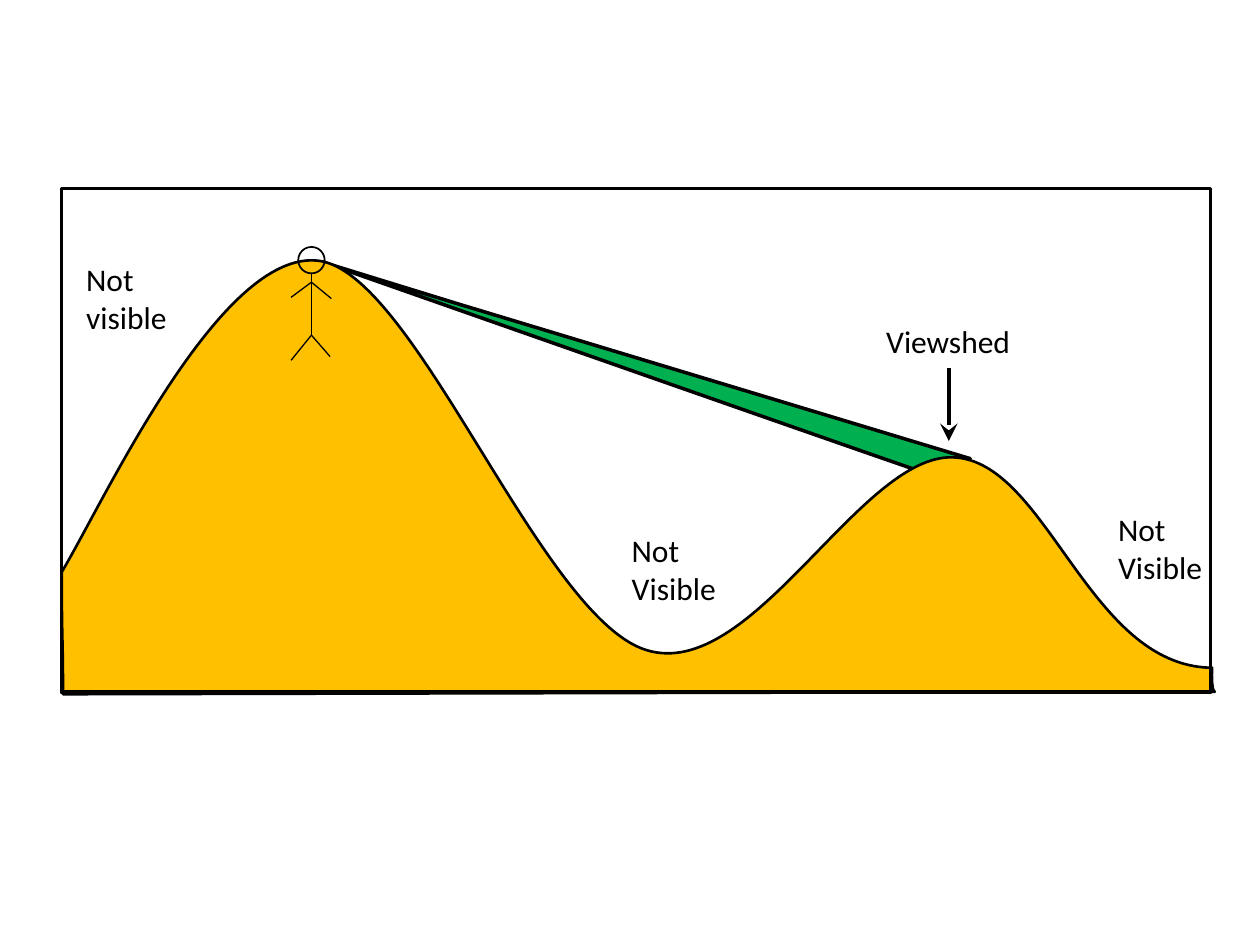
import pptx
import pptx.dml.color
import pptx.enum.shapes
import pptx.enum.text
import pptx.oxml.ns
import pptx.util
from lxml import etree

COLUMNS, ROWS = 100, 75
BLACK, GREEN, GOLD = "000000", "00B050", "FFC000"
qn = pptx.oxml.ns.qn


def rgb(value):
    return pptx.dml.color.RGBColor.from_string(value)


class Drawing:
    font = "Calibri"
    size = 18
    ink = BLACK

    def __init__(self, prs):
        self.col = prs.slide_width / COLUMNS
        self.row = prs.slide_height / ROWS
        self.slide = prs.slides.add_slide(prs.slide_layouts[6])
        self.shapes = self.slide.shapes

    def place(self, x, y):
        return round(x * self.col), round(y * self.row)

    def style(self, sp, fill, weight):
        sp.shadow.inherit = False
        if fill:
            sp.fill.solid()
            sp.fill.fore_color.rgb = rgb(fill)
        else:
            sp.fill.background()
        self.stroke(sp, weight)

    def stroke(self, sp, weight):
        sp.line.color.rgb = rgb(self.ink)
        sp.line.width = pptx.util.Pt(weight)

    def freeform(self, start, segments, fill, weight):
        builder = self.shapes.build_freeform(*self.place(*start))
        builder.add_line_segments([self.place(*seg[-1]) for seg in segments], close=True)
        sp = builder.convert_to_shape()
        for line, seg in zip(list(sp._element.iter(qn("a:lnTo"))), segments):
            if len(seg) == 3:
                self.bend(sp, line, seg)
        self.style(sp, fill, weight)

    def bend(self, sp, line, points):
        curve = etree.Element(qn("a:cubicBezTo"))
        for point in points:
            x, y = self.place(*point)
            etree.SubElement(curve, qn("a:pt"), x=str(x - sp.left), y=str(y - sp.top))
        line.getparent().replace(line, curve)

    def shape(self, kind, x, y, w, h, weight, parent=None):
        sp = (parent or self.shapes).add_shape(kind, *self.place(x, y), *self.place(w, h))
        self.style(sp, None, weight)

    def line(self, start, end, weight, parent=None, arrow=None):
        sp = (parent or self.shapes).add_connector(
            pptx.enum.shapes.MSO_CONNECTOR.STRAIGHT,
            *self.place(*start), *self.place(*end))
        self.stroke(sp, weight)
        if arrow:
            etree.SubElement(sp.line._get_or_add_ln(), qn("a:tailEnd"),
                             type=arrow, w="lg", len="lg")
        etree.SubElement(sp._element.spPr, qn("a:effectLst"))

    def label(self, lines, x, y, w, h):
        tf = self.shapes.add_textbox(*self.place(x, y), *self.place(w, h)).text_frame
        tf.word_wrap = False
        tf.auto_size = pptx.enum.text.MSO_AUTO_SIZE.SHAPE_TO_FIT_TEXT
        tf.text = "\n".join(lines)
        for p in tf.paragraphs:
            p.font.name = self.font
            p.font.size = pptx.util.Pt(self.size)
            p.font.color.rgb = rgb(self.ink)

    def observer(self):
        figure = self.shapes.add_group_shape().shapes
        shoulder, hip = (24.72, 22.4), (24.72, 26.6)
        self.shape(pptx.enum.shapes.MSO_SHAPE.OVAL, 23.67, 19.6, 2.1, 2.1, 1, figure)
        limbs = [((24.72, 21.7), hip), (hip, (26.2, 28.3)), (shoulder, (26.3, 23.7)),
                 (shoulder, (23.1, 23.6)), (hip, (23.1, 28.6))]
        for start, end in limbs:
            self.line(start, end, 0.75, figure)


def main():
    prs = pptx.Presentation()
    prs.slide_width = pptx.util.Inches(10)
    prs.slide_height = pptx.util.Inches(7.5)
    s = Drawing(prs)

    sight = [
        [(77, 36.4)],
        [(73.6, 37.6)],
        [(66, 35), (25.6, 20.8), (25.6, 20.8)],
    ]
    s.freeform((36.3, 24.1), sight, GREEN, 2)

    hills = [
        [(96.2, 53), (96.1, 54.7), (96.4, 54.9)],
        [(5, 55.1)],
        [(5, 50.4), (4.9, 51.1), (4.9, 45.4)],
        [(8.3, 39.7), (17.5, 19.7), (25.3, 20.7)],
        [(33, 21.7), (42.9, 49), (51.3, 51.6)],
        [(59.7, 54.2), (68.2, 36.1), (75.6, 36.3)],
        [(83.1, 36.5), (86.3, 52.8), (96.1, 53)],
    ]
    s.freeform((96.2, 53), hills, GOLD, 1.5)

    s.observer()
    s.shape(pptx.enum.shapes.MSO_SHAPE.RECTANGLE, 4.88, 14.95, 91.2, 40, 2)

    s.label(["Viewshed"], 69.35, 25.1, 12, 4)
    s.label(["Not", "visible"], 5.85, 20.15, 8.5, 7.1)
    for x, y in ((49.15, 41.65), (87.75, 40)):
        s.label(["Not", "Visible"], x, y, 8.8, 7.1)
    s.line((75.3, 29.2), (75.3, 35), 2, arrow="stealth")

    prs.save("out.pptx")


if __name__ == "__main__":
    main()
